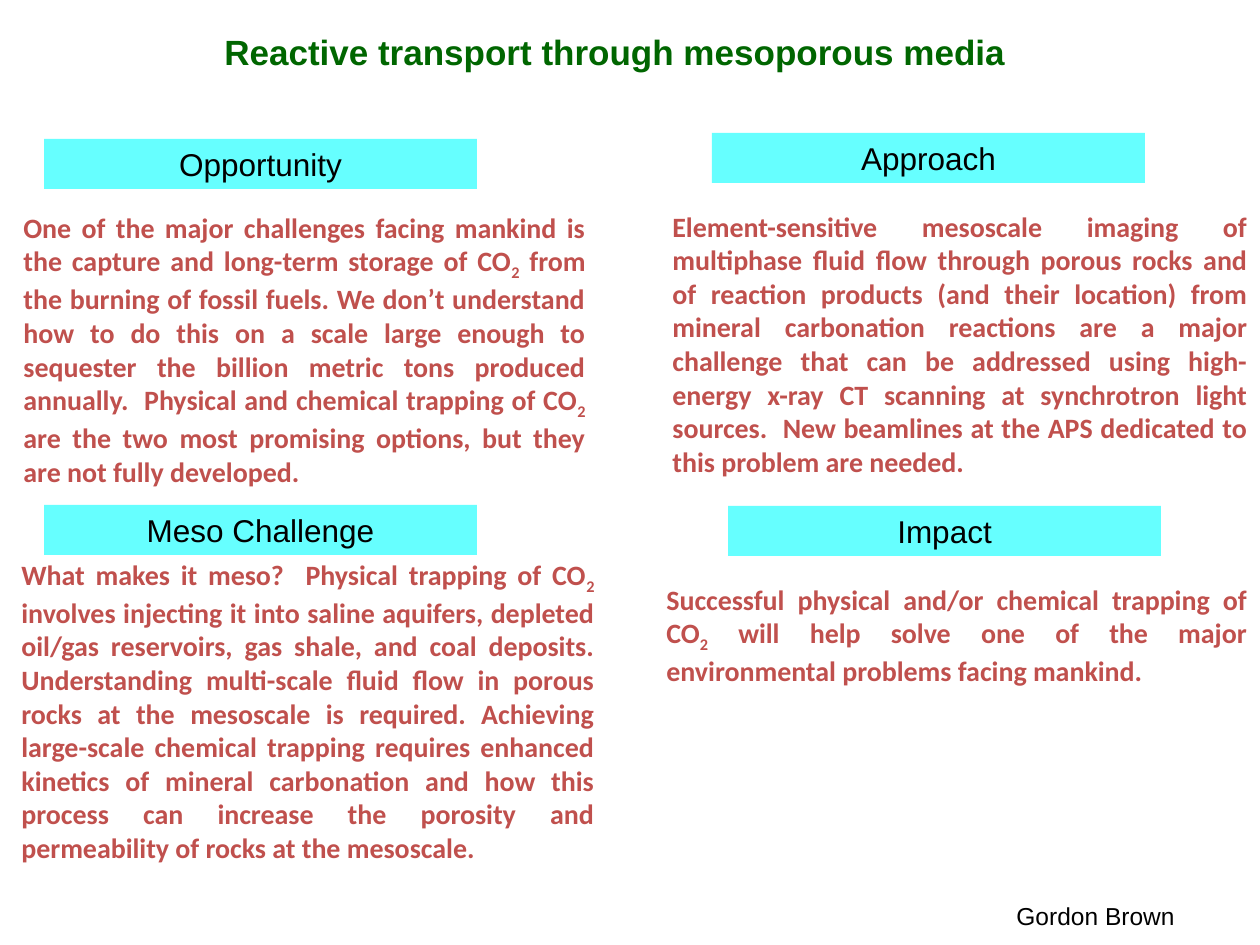
from pptx import Presentation
from pptx.dml.color import RGBColor
from pptx.enum.shapes import MSO_SHAPE
from pptx.enum.text import MSO_ANCHOR, PP_ALIGN
from pptx.util import Emu, Pt

EMU_PER_PX = 914400 / 126
HEADING_SIZE = (433, 50)

# Heading, its left and top, body text, its left, top, width and height
SECTIONS = [
    ("Opportunity", 44, 139,
     "One of the major challenges facing mankind is the capture and long-term "
     "storage of CO2 from the burning of fossil fuels. We don’t understand how "
     "to do this on a scale large enough to sequester the billion metric tons "
     "produced annually.  Physical and chemical trapping of CO2 are the two "
     "most promising options, but they are not fully developed.",
     (11, 204, 587, 285)),
    ("Meso Challenge", 44, 505,
     "What makes it meso?  Physical trapping of CO2 involves injecting it into "
     "saline aquifers, depleted oil/gas reservoirs, gas shale, and coal "
     "deposits. Understanding multi-scale fluid flow in porous rocks at the "
     "mesoscale is required. Achieving large-scale chemical trapping requires "
     "enhanced kinetics of mineral carbonation and how this process can "
     "increase the porosity and permeability of rocks at the mesoscale.",
     (9, 551, 598, 318)),
    ("Approach", 712, 133,
     "Element-sensitive mesoscale imaging of multiphase fluid flow through "
     "porous rocks and of reaction products (and their location) from mineral "
     "carbonation reactions are a major challenge that can be addressed using "
     "high-energy x-ray CT scanning at synchrotron light sources.  New "
     "beamlines at the APS dedicated to this problem are needed.",
     (660, 203, 600, 285)),
    ("Impact", 728, 506,
     "Successful physical and/or chemical trapping of CO2 will help solve one "
     "of the major environmental problems facing mankind.",
     (654, 576, 606, 115)),
]


def px(length):
    return Emu(round(length * EMU_PER_PX))


def color(hex_code):
    return RGBColor.from_string(hex_code)


def style(paragraph, name, size, hex_code, align, bold=False):
    paragraph.alignment = align
    font = paragraph.font
    font.name, font.size, font.bold = name, Pt(size), bold
    font.color.rgb = color(hex_code)


def add_title(slide, text, left, top, width, height):
    title = slide.shapes.title
    title.left, title.top = px(left), px(top)
    title.width, title.height = px(width), px(height)
    title.text_frame.text = text
    title.text_frame.vertical_anchor = MSO_ANCHOR.MIDDLE
    style(title.text_frame.paragraphs[0], "Arial", 20, "006600",
          PP_ALIGN.CENTER, bold=True)


def add_heading(slide, text, left, top):
    bar = slide.shapes.add_shape(MSO_SHAPE.RECTANGLE, px(left), px(top),
                                 *map(px, HEADING_SIZE))
    bar.shadow.inherit = False
    bar.fill.solid()
    bar.fill.fore_color.rgb = color("66FFFF")
    bar.line.fill.background()
    bar.text_frame.text = text
    style(bar.text_frame.paragraphs[0], "Arial", 18, "000000", PP_ALIGN.CENTER)


def add_text_box(slide, box, wrap=True):
    frame = slide.shapes.add_textbox(*map(px, box)).text_frame
    frame.word_wrap = wrap
    return frame.paragraphs[0]


def add_body(slide, text, box):
    """Justified text in which the 2 of each CO2 is a subscript."""
    body = add_text_box(slide, box)
    style(body, "Calibri", 16, "C0504D", PP_ALIGN.JUSTIFY, bold=True)
    before, *rest = text.split("CO2")
    body.add_run().text = before + ("CO" if rest else "")
    for index, part in enumerate(rest, start=1):
        subscript = body.add_run()
        subscript.text = "2"
        subscript.font._element.set("baseline", "-25000")
        body.add_run().text = part + ("CO" if index < len(rest) else "")


def add_author(slide, name, box):
    author = add_text_box(slide, box, wrap=False)
    author.text = name
    style(author, "Arial", 14, "000000", PP_ALIGN.LEFT)


def main():
    prs = Presentation()
    prs.slide_width, prs.slide_height = px(1260), px(945)
    slide = prs.slides.add_slide(prs.slide_layouts[5])

    add_title(slide, "Reactive transport through mesoporous media",
              39, 24, 1152, 55)

    # Four sections, each a heading bar over a paragraph
    for heading, left, top, text, box in SECTIONS:
        add_heading(slide, heading, left, top)
        add_body(slide, text, box)

    add_author(slide, "Gordon Brown", (1004, 895, 184, 43))
    prs.save("out.pptx")


if __name__ == "__main__":
    main()
